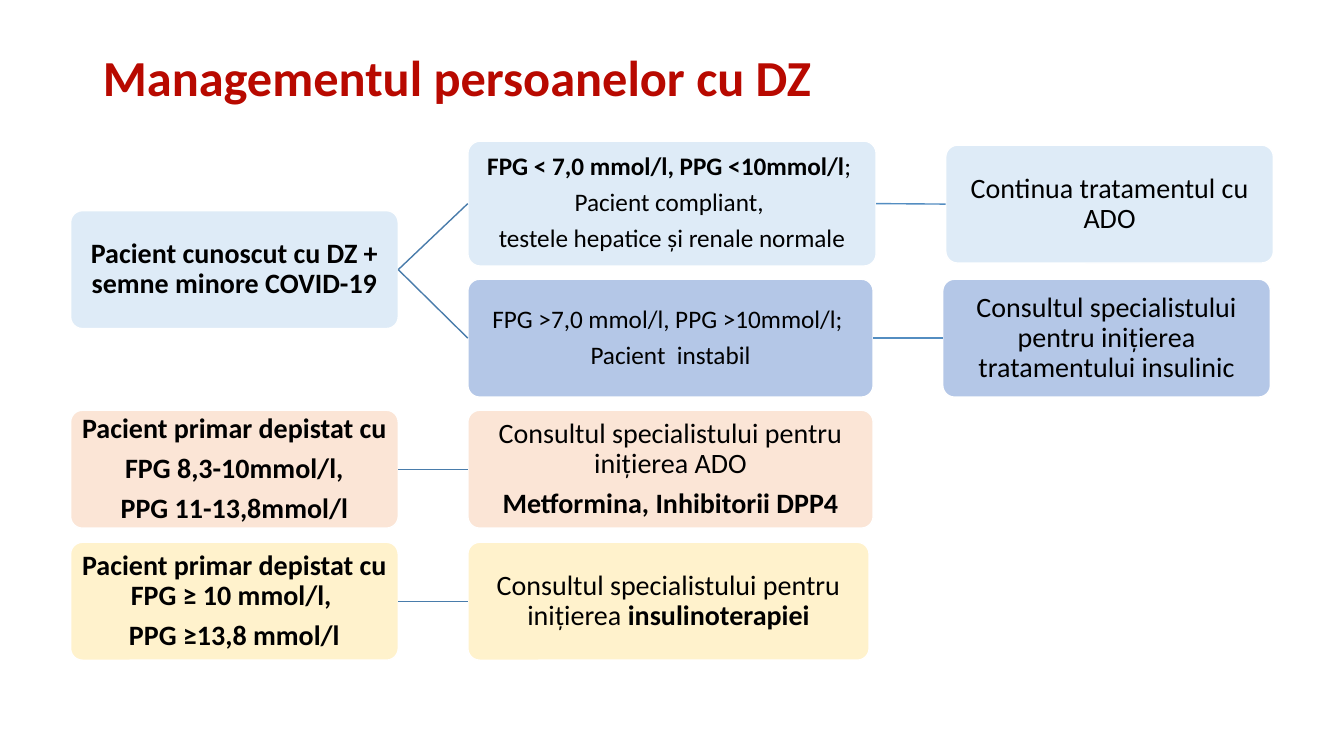
import pptx
import pptx.util
import pptx.dml.color
import pptx.enum.shapes
import pptx.enum.text
from pptx.util import Inches, Pt

# Content
FONT = "Calibri"
TITLE = "Managementul persoanelor cu DZ"
BLUE, DEEP_BLUE, PEACH, YELLOW = "DEEBF7", "B4C7E7", "FBE5D6", "FFF2CC"
LEFT, MIDDLE, HEIGHT = 0.7, 4.64, 1.17

# name: (left, top, width, height, fill, text size, paragraphs of (text, bold) runs)
BOXES = {
    "known": (LEFT, 2.09, 3.25, HEIGHT, BLUE, 20, [
        [("Pacient cunoscut cu DZ + semne minore COVID-19", True)]]),
    "stable": (MIDDLE, 1.4, 4.05, 1.24, BLUE, 18, [
        [("FPG < 7,0 mmol/l, PPG <10mmol/l", True), ("; ", False)],
        [("Pacient compliant, ", False)],
        [("testele hepatice și renale normale", False)]]),
    "continue": (9.38, 1.44, 3.25, HEIGHT, BLUE, 20, [
        [("Continua tratamentul cu ADO", False)]]),
    "unstable": (MIDDLE, 2.77, 4.02, HEIGHT, DEEP_BLUE, 18, [
        [("FPG >7,0 mmol/l, PPG >10mmol/l; ", False)],
        [("Pacient  instabil", False)]]),
    "insulin": (9.35, 2.77, 3.25, HEIGHT, DEEP_BLUE, 20, [
        [("Consultul specialistului pentru inițierea tratamentului insulinic", False)]]),
    "new moderate": (LEFT, 4.07, 3.25, HEIGHT, PEACH, 20, [
        [("Pacient primar depistat cu", True)],
        [("FPG 8,3-10mmol/l,", True)],
        [("PPG 11-13,8mmol/l", True)]]),
    "oral therapy": (MIDDLE, 4.07, 4.02, HEIGHT, PEACH, 20, [
        [("Consultul specialistului pentru inițierea ADO", False)],
        [("Metformina, Inhibitorii DPP4", True)]]),
    "new severe": (LEFT, 5.38, 3.25, HEIGHT, YELLOW, 20, [
        [("Pacient primar depistat cu FPG ≥ 10 mmol/l, ", True)],
        [("PPG ≥13,8 mmol/l", True)]]),
    "insulin therapy": (MIDDLE, 5.38, 3.98, HEIGHT, YELLOW, 20, [
        [("Consultul specialistului pentru inițierea ", False),
         ("insulinoterapiei", True)]]),
}

FIRST_STEP, SECOND_STEP = "497CAB", "538DC1"
LINKS = [
    ("known", "stable", FIRST_STEP),
    ("known", "unstable", FIRST_STEP),
    ("stable", "continue", SECOND_STEP),
    ("unstable", "insulin", SECOND_STEP),
    ("new moderate", "oral therapy", FIRST_STEP),
    ("new severe", "insulin therapy", FIRST_STEP),
]
LEFT_SITE, RIGHT_SITE = 1, 3


def color(value):
    return pptx.dml.color.RGBColor.from_string(value)


def style_span(span, size, bold, value):
    span.font.name = FONT
    span.font.size = Pt(size)
    span.font.bold = bold
    span.font.color.rgb = color(value)


def add_box(page, left, top, width, height, fill, size, paragraphs):
    box = page.shapes.add_shape(
        pptx.enum.shapes.MSO_SHAPE.ROUNDED_RECTANGLE,
        Inches(left), Inches(top), Inches(width), Inches(height))
    box.adjustments[0] = 0.1
    box.shadow.inherit = False
    box.fill.solid()
    box.fill.fore_color.rgb = color(fill)
    box.line.color.rgb = color("FFFFFF")
    box.line.width = Pt(1)

    frame = box.text_frame
    frame.word_wrap = True
    frame.vertical_anchor = pptx.enum.text.MSO_ANCHOR.MIDDLE
    frame.margin_left = frame.margin_right = Inches(0.05)
    frame.margin_top = frame.margin_bottom = Inches(0.05)
    for index, spans in enumerate(paragraphs):
        para = frame.add_paragraph() if index else frame.paragraphs[0]
        para.alignment = pptx.enum.text.PP_ALIGN.CENTER
        para.line_spacing = 0.9
        para.space_after = Pt(0.35 * size)
        for text, bold in spans:
            span = para.add_run()
            span.text = text
            style_span(span, size, bold, "000000")
    return box


def add_link(page, start, end, value):
    link = page.shapes.add_connector(
        pptx.enum.shapes.MSO_CONNECTOR.STRAIGHT, 0, 0, 0, 0)
    link.begin_connect(start, RIGHT_SITE)
    link.end_connect(end, LEFT_SITE)
    link.line.color.rgb = color(value)
    link.line.width = Pt(1)
    properties = link._element.spPr
    properties.append(properties.makeelement(pptx.oxml.ns.qn("a:effectLst"), {}))


def main():
    deck = pptx.Presentation()
    deck.slide_width, deck.slide_height = Inches(13.33), Inches(7.5)
    page = deck.slides.add_slide(deck.slide_layouts[5])

    # Title
    title = page.shapes.title
    title.left, title.top = Inches(0.92), Inches(0.4)
    title.width, title.height = Inches(11.5), Inches(0.8)
    title.text_frame.text = TITLE
    title.text_frame.vertical_anchor = pptx.enum.text.MSO_ANCHOR.MIDDLE
    heading = title.text_frame.paragraphs[0]
    heading.alignment = pptx.enum.text.PP_ALIGN.LEFT
    heading.line_spacing = 0.9
    style_span(heading.runs[0], 36, True, "B80900")

    # Decision boxes and the lines between them
    boxes = {name: add_box(page, *details) for name, details in BOXES.items()}
    for start, end, value in LINKS:
        add_link(page, boxes[start], boxes[end], value)

    deck.save("out.pptx")


if __name__ == "__main__":
    main()
